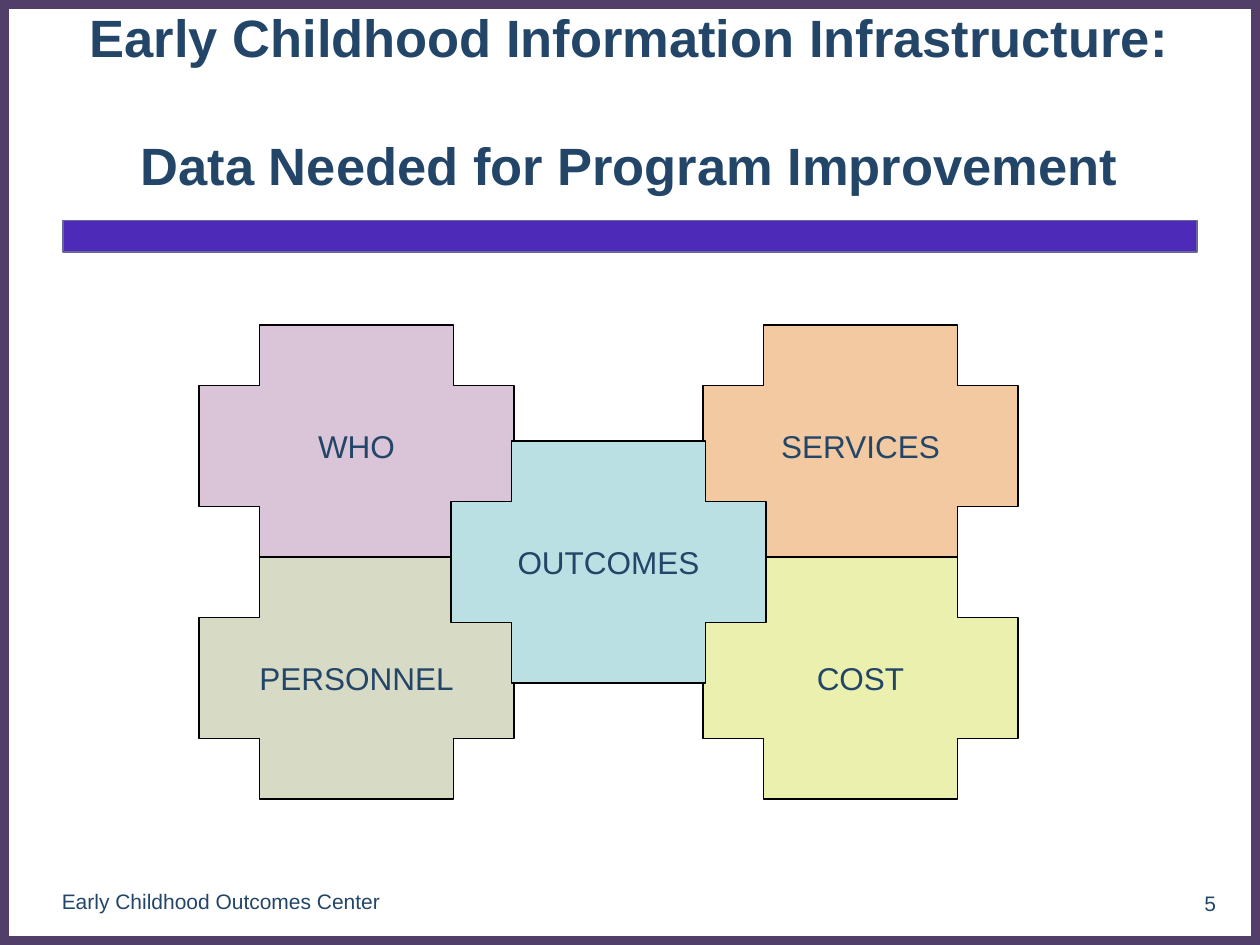
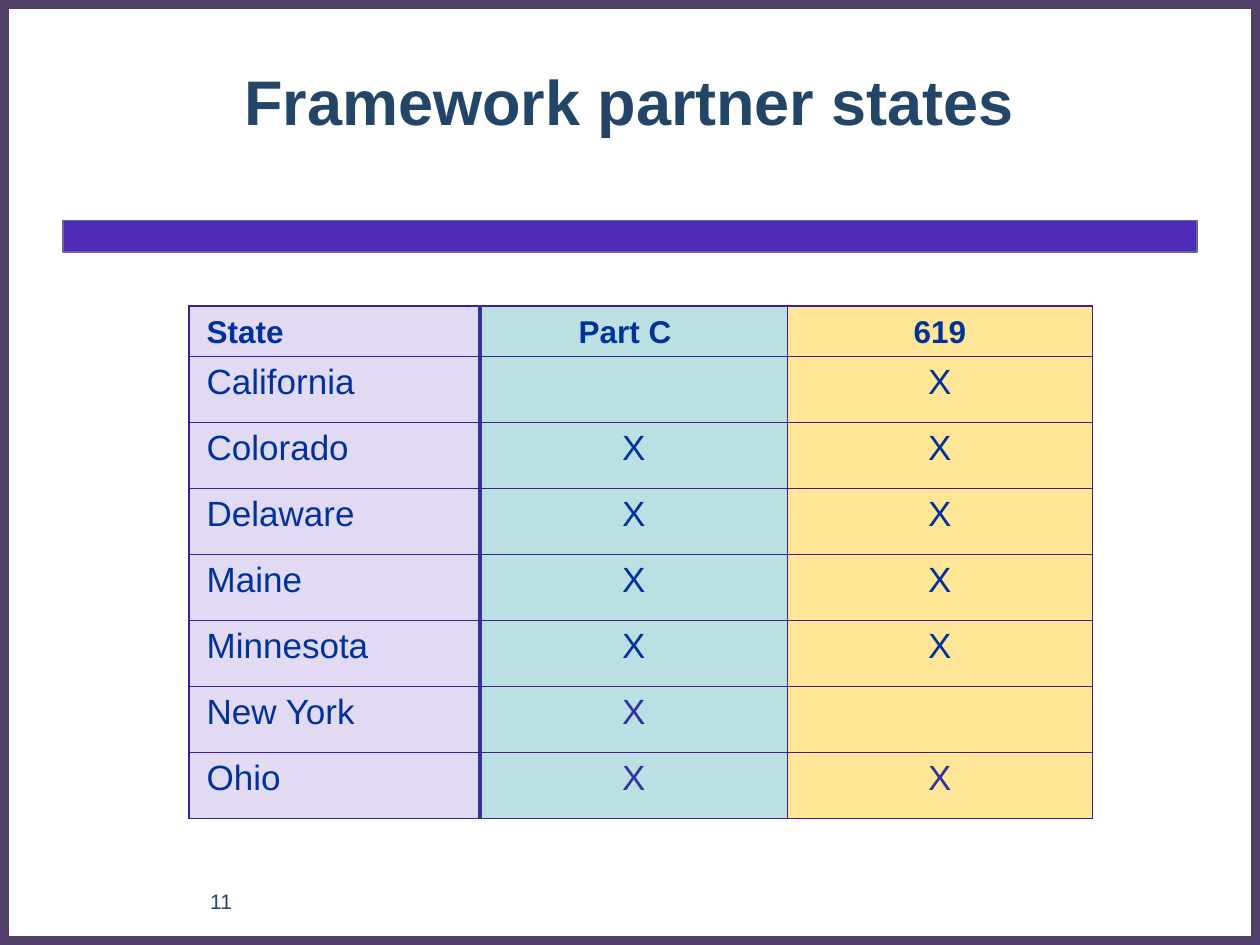
from typing import NamedTuple

from lxml.etree import SubElement
from pptx import Presentation
from pptx.dml.color import RGBColor
from pptx.enum.shapes import MSO_SHAPE
from pptx.enum.text import MSO_ANCHOR, MSO_AUTO_SIZE, PP_ALIGN
from pptx.oxml.ns import qn
from pptx.shapes.autoshape import Shape
from pptx.slide import Slide
from pptx.table import _Cell as Cell
from pptx.text.text import TextFrame
from pptx.util import Inches, Pt

FONT = "Arial"
TITLE_ONLY = 5

NAVY = RGBColor(0x22, 0x45, 0x68)
FRAME_PURPLE = RGBColor(0x52, 0x3F, 0x69)
BAND_VIOLET = RGBColor(0x4E, 0x2A, 0xB8)
BAND_EDGE = RGBColor(0x66, 0x66, 0x99)
WHITE = RGBColor(0xFF, 0xFF, 0xFF)
BLACK = RGBColor(0x00, 0x00, 0x00)
MAUVE = RGBColor(0xD9, 0xC5, 0xD7)
PEACH = RGBColor(0xF2, 0xC9, 0xA0)
LIME = RGBColor(0xEB, 0xF0, 0xAE)
SAGE = RGBColor(0xD7, 0xDA, 0xC4)
AQUA = RGBColor(0xBB, 0xE0, 0xE3)
LILAC = RGBColor(0xE2, 0xD9, 0xF3)
YELLOW = RGBColor(0xFF, 0xE6, 0x97)
TABLE_BLUE = RGBColor(0x00, 0x33, 0x99)
MARK_INDIGO = RGBColor(0x33, 0x33, 0x9D)
GRID_PURPLE = RGBColor(0x3E, 0x21, 0x8F)
DIVIDER_INDIGO = RGBColor(0x33, 0x33, 0x99)


class Box(NamedTuple):
    """A place on the slide, in inches."""
    left: float
    top: float
    width: float
    height: float

    def lengths(self) -> list[Inches]:
        return [Inches(value) for value in self]


class Piece(NamedTuple):
    """A puzzle piece, placed in half steps from the top left piece."""
    label: str
    column: int
    row: int
    color: RGBColor


class Column(NamedTuple):
    heading: str
    width: float
    fill: RGBColor
    alignment: PP_ALIGN
    heading_right_margin: float


class State(NamedTuple):
    name: str
    part_c: str
    preschool: str
    mark_color: RGBColor = TABLE_BLUE


class Border(NamedTuple):
    color: RGBColor
    width: float


FRAME_BOX = Box(0, 0, 10, 7.5)
BAND_BOX = Box(0.5, 1.75, 9, 0.25)
TITLE_BOX = Box(0.58, 0.17, 8.83, 1.25)
FOOTER_BOX = Box(0.17, 6.95, 3.17, 0.4)
NUMBER_BOX = Box(8.25, 6.92, 1.5, 0.5)

FIRST_PIECE = Box(1.58, 2.58, 2.5, 1.92)
PIECE_STEP_X, PIECE_STEP_Y = 2.0, 0.92
PIECES = [
    Piece("WHO", 0, 0, MAUVE),
    Piece("SERVICES", 2, 0, PEACH),
    Piece("COST", 2, 2, LIME),
    Piece("PERSONNEL", 0, 2, SAGE),
    Piece("OUTCOMES", 1, 1, AQUA),
]

TABLE_BOX = Box(1.5, 2.43, 7.17, 4.07)
HEADING_HEIGHT = 0.4
CELL_MARGIN = 0.14
COLUMNS = [
    Column("State", 2.31, LILAC, PP_ALIGN.LEFT, CELL_MARGIN),
    Column("Part C", 2.44, AQUA, PP_ALIGN.CENTER, 2 * CELL_MARGIN),
    Column("619", 2.42, YELLOW, PP_ALIGN.CENTER, CELL_MARGIN),
]
STATES = [
    State("California", "", "X"),
    State("Colorado", "X", "X"),
    State("Delaware", "X", "X"),
    State("Maine", "X", "X"),
    State("Minnesota", "X", "X"),
    State("New York", "X", "", MARK_INDIGO),
    State("Ohio", "X", "X", MARK_INDIGO),
]
GRID = Border(GRID_PURPLE, 1)
DIVIDER = Border(DIVIDER_INDIGO, 2.25)


def format_text(frame: TextFrame, size: float, color: RGBColor = NAVY,
                bold: bool = False,
                alignment: PP_ALIGN = PP_ALIGN.CENTER) -> None:
    for paragraph in frame.paragraphs:
        paragraph.alignment = alignment
        for run in paragraph.runs:
            run.font.name = FONT
            run.font.size = Pt(size)
            run.font.bold = bold
            run.font.color.rgb = color


def add_outlined(slide: Slide, preset: MSO_SHAPE, box: Box,
                 fill: RGBColor | None, line: RGBColor,
                 line_width: float = 0.75) -> Shape:
    shape = slide.shapes.add_shape(preset, *box.lengths())
    shape.shadow.inherit = False
    if fill is None:
        shape.fill.background()
    else:
        shape.fill.solid()
        shape.fill.fore_color.rgb = fill
    shape.line.color.rgb = line
    shape.line.width = Pt(line_width)
    return shape


def add_small_text(slide: Slide, text: str, box: Box,
                   alignment: PP_ALIGN = PP_ALIGN.CENTER) -> None:
    frame = slide.shapes.add_textbox(*box.lengths()).text_frame
    frame.word_wrap = True
    frame.vertical_anchor = MSO_ANCHOR.MIDDLE
    frame.text = text
    format_text(frame, 12, alignment=alignment)


def add_framed_slide(presentation: Presentation, title_text: str,
                     title_size: float) -> Slide:
    """Add a slide with the frame, the band and a formatted title."""
    slide = presentation.slides.add_slide(
        presentation.slide_layouts[TITLE_ONLY])
    slide.background.fill.solid()
    slide.background.fill.fore_color.rgb = WHITE
    add_outlined(slide, MSO_SHAPE.RECTANGLE, FRAME_BOX, None, FRAME_PURPLE, 10)
    add_outlined(slide, MSO_SHAPE.RECTANGLE, BAND_BOX, BAND_VIOLET, BAND_EDGE)
    title = slide.shapes.title
    title.left, title.top, title.width, title.height = TITLE_BOX.lengths()
    frame = title.text_frame
    frame.word_wrap = True
    frame.auto_size = MSO_AUTO_SIZE.NONE
    frame.vertical_anchor = MSO_ANCHOR.MIDDLE
    frame.text = title_text
    for paragraph in frame.paragraphs[1:]:
        paragraph.space_before = Pt(37)
    format_text(frame, title_size, bold=True)
    return slide


def add_piece(slide: Slide, piece: Piece) -> None:
    box = FIRST_PIECE._replace(
        left=FIRST_PIECE.left + piece.column * PIECE_STEP_X,
        top=FIRST_PIECE.top + piece.row * PIECE_STEP_Y)
    shape = add_outlined(slide, MSO_SHAPE.CROSS, box, piece.color, BLACK)
    frame = shape.text_frame
    frame.word_wrap = False
    frame.vertical_anchor = MSO_ANCHOR.MIDDLE
    frame.text = piece.label
    format_text(frame, 18)


def set_borders(cell: Cell, left: Border, right: Border) -> None:
    """Draw the four borders; top and bottom always follow the grid."""
    properties = cell._tc.get_or_add_tcPr()
    sides = {"a:lnL": left, "a:lnR": right, "a:lnT": GRID, "a:lnB": GRID}
    for tag, border in sides.items():
        line = SubElement(properties, qn(tag), w=str(Pt(border.width)))
        fill = SubElement(line, qn("a:solidFill"))
        SubElement(fill, qn("a:srgbClr"), val=str(border.color))


def add_state_table(slide: Slide) -> None:
    table = slide.shapes.add_table(
        len(STATES) + 1, len(COLUMNS), *TABLE_BOX.lengths()).table
    table.first_row = False
    table.horz_banding = False
    state_height = (TABLE_BOX.height - HEADING_HEIGHT) / len(STATES)
    for row_index, row in enumerate(table.rows):
        row.height = Inches(state_height if row_index else HEADING_HEIGHT)

    for column_index, column in enumerate(COLUMNS):
        table.columns[column_index].width = Inches(column.width)
        left = DIVIDER if column_index == 1 else GRID
        right = DIVIDER if column_index == 0 else GRID
        texts = [column.heading] + [state[column_index] for state in STATES]
        for row_index, text in enumerate(texts):
            is_heading = row_index == 0
            cell = table.cell(row_index, column_index)
            set_borders(cell, left, right)
            cell.fill.solid()
            cell.fill.fore_color.rgb = column.fill
            cell.margin_left = Inches(CELL_MARGIN)
            cell.margin_right = Inches(
                column.heading_right_margin if is_heading else CELL_MARGIN)
            cell.vertical_anchor = (
                MSO_ANCHOR.BOTTOM if is_heading else MSO_ANCHOR.TOP)
            color = TABLE_BLUE
            if column_index and not is_heading:
                color = STATES[row_index - 1].mark_color
            cell.text_frame.text = text
            format_text(cell.text_frame, 18 if is_heading else 20, color,
                        is_heading, column.alignment)


def add_infrastructure_slide(presentation: Presentation) -> None:
    slide = add_framed_slide(
        presentation,
        "Early Childhood Information Infrastructure:\n"
        "Data Needed for Program Improvement", 30)
    add_small_text(slide, "Early Childhood Outcomes Center", FOOTER_BOX)
    add_small_text(slide, "5", NUMBER_BOX, PP_ALIGN.RIGHT)
    for piece in PIECES:
        add_piece(slide, piece)


def add_partner_states_slide(presentation: Presentation) -> None:
    slide = add_framed_slide(presentation, "Framework partner states", 36)
    add_state_table(slide)
    add_small_text(slide, "11", FOOTER_BOX)


def main() -> None:
    presentation = Presentation()
    presentation.slide_width = Inches(FRAME_BOX.width)
    presentation.slide_height = Inches(FRAME_BOX.height)
    add_infrastructure_slide(presentation)
    add_partner_states_slide(presentation)
    presentation.save("out.pptx")


if __name__ == "__main__":
    main()
